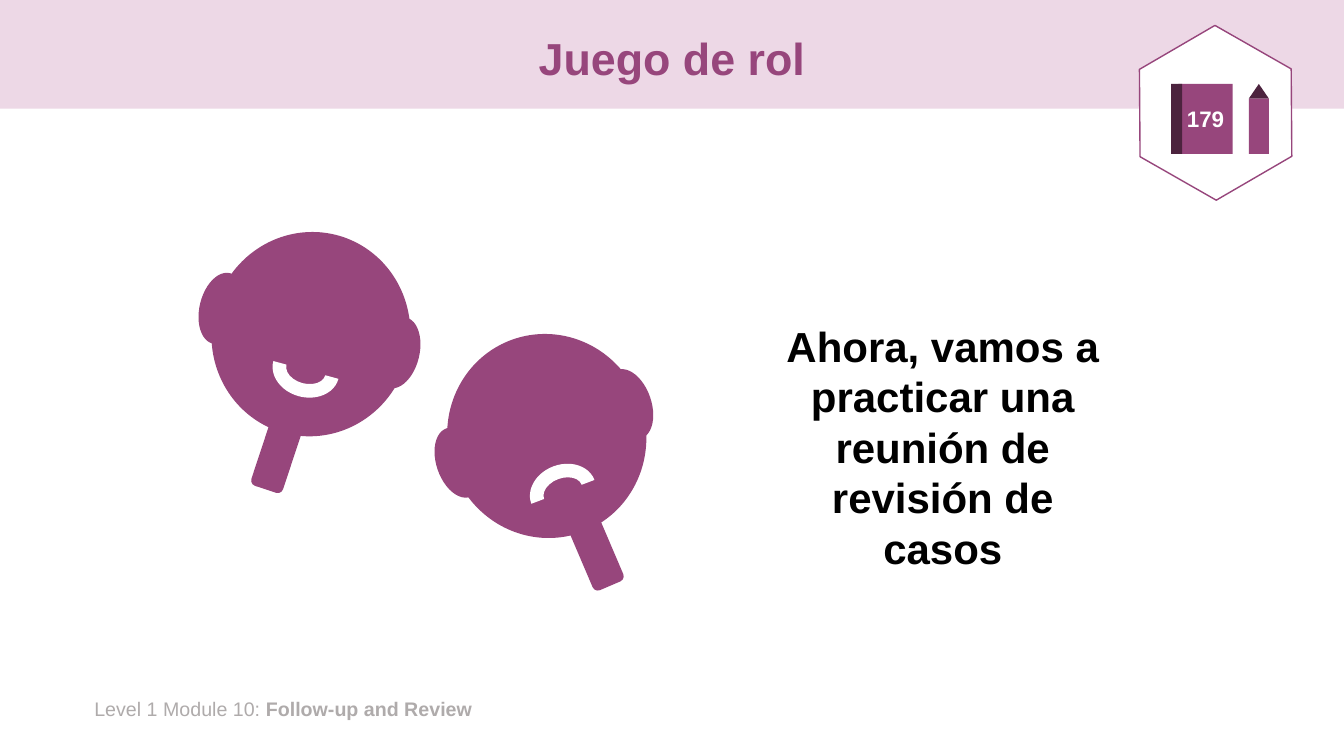
"""Build the role-play slide with two masks and a workbook page badge."""
import pptx
import pptx.dml.color
import pptx.enum.shapes
import pptx.enum.text
import pptx.util

Pt = pptx.util.Pt
SHAPE = pptx.enum.shapes.MSO_SHAPE
ALIGN = pptx.enum.text.PP_ALIGN
MIDDLE = pptx.enum.text.MSO_ANCHOR.MIDDLE
COLORS = {"plum": "97467C", "dark": "4C233E", "band": "EDD8E6",
          "white": "FFFFFF", "black": "000000", "gray": "AFABAB"}


def add_filled(shapes, kind, bounds, color, rotation=0):
    shape = shapes.add_shape(kind, *[Pt(length) for length in bounds])
    shape.shadow.inherit = False
    shape.fill.solid()
    shape.fill.fore_color.rgb = pptx.dml.color.RGBColor.from_string(COLORS[color])
    shape.line.fill.background()
    shape.rotation = rotation
    return shape


def format_span(span, size, color, bold=True):
    span.font.name = "Arial"
    span.font.size = Pt(size)
    span.font.bold = bold
    span.font.color.rgb = pptx.dml.color.RGBColor.from_string(COLORS[color])


deck = pptx.Presentation()
deck.slide_width, deck.slide_height = Pt(960), Pt(540)
page = deck.slides.add_slide(deck.slide_layouts[5])

band = add_filled(page.shapes, SHAPE.RECTANGLE, (0, 0, 960, 77.6), "band")
title = page.shapes.title
page.shapes._spTree.remove(band._element)
page.shapes._spTree.insert(2, band._element)
title.left, title.top, title.width, title.height = Pt(66), Pt(9.4), Pt(828), Pt(68.4)
title.text_frame.text = "Juego de rol"
title.text_frame.vertical_anchor = MIDDLE
para = title.text_frame.paragraphs[0]
para.alignment = ALIGN.CENTER
para.line_spacing = 0.9
format_span(para.runs[0], 32, "plum")

footer = page.shapes.add_textbox(Pt(60.3), Pt(494.6), Pt(327.6), Pt(24.5))
footer.text_frame.word_wrap = True
para = footer.text_frame.paragraphs[0]
for words, bold in (("Level 1 Module 10: ", False), ("Follow-up and Review", True)):
    span = para.add_run()
    span.text = words
    format_span(span, 14, "gray", bold)

handle, head, ear, mouth = (23.8, 69.1), (141.8, 146.2), (31, 51.8), (48.2, 38.9)
masks = [
    [(188.6, 282.2, 18.3), (151.2, 165.6, 13.8), (142.6, 194.4, 13.8),
     (268.6, 226.1, 13.8), (194.4, 244.8, 195.3)],
    [(410.4, 352.1, 336.9), (319.7, 238.3, 341), (311.8, 304.6, 341),
     (434.2, 262.8, 341), (378, 331.9, 339.3)],
]
parts = [(SHAPE.ROUNDED_RECTANGLE, handle, "plum"), (SHAPE.OVAL, head, "plum"),
         (SHAPE.OVAL, ear, "plum"), (SHAPE.OVAL, ear, "plum"),
         (SHAPE.BLOCK_ARC, mouth, "white")]
for places in masks:
    mask = page.shapes.add_group_shape()
    for (kind, size, color), (left, top, rotation) in zip(parts, places):
        add_filled(mask.shapes, kind, (left, top, *size), color, rotation)

message = page.shapes.add_textbox(Pt(545), Pt(225.4), Pt(257), Pt(189.4))
message.text_frame.word_wrap = True
message.text_frame.text = "Ahora, vamos a practicar una reunión de revisión de casos"
para = message.text_frame.paragraphs[0]
para.alignment = ALIGN.CENTER
para.line_spacing = Pt(36)
format_span(para.runs[0], 30, "black")

badge = page.shapes.add_group_shape()
hexagon = add_filled(badge.shapes, SHAPE.HEXAGON, (805.7, 26.6, 125.3, 108), "white", 29.7)
hexagon.adjustments[0] = 0.29
hexagon.line.width = Pt(1)
hexagon.line.color.rgb = pptx.dml.color.RGBColor.from_string(COLORS["plum"])
book = add_filled(badge.shapes, SHAPE.RECTANGLE, (841.7, 60, 38.9, 50), "plum")
book.text_frame.word_wrap = False
book.text_frame.vertical_anchor = MIDDLE
book.text_frame.text = "179"
para = book.text_frame.paragraphs[0]
para.alignment = ALIGN.CENTER
format_span(para.runs[0], 16, "white")
add_filled(badge.shapes, SHAPE.RECTANGLE, (836.6, 60, 7.9, 50), "dark")
add_filled(badge.shapes, SHAPE.ISOSCELES_TRIANGLE, (892, 60, 14.4, 10.5), "dark")
add_filled(badge.shapes, SHAPE.RECTANGLE, (892, 70.5, 14.4, 39.5), "plum")

deck.save("out.pptx")
